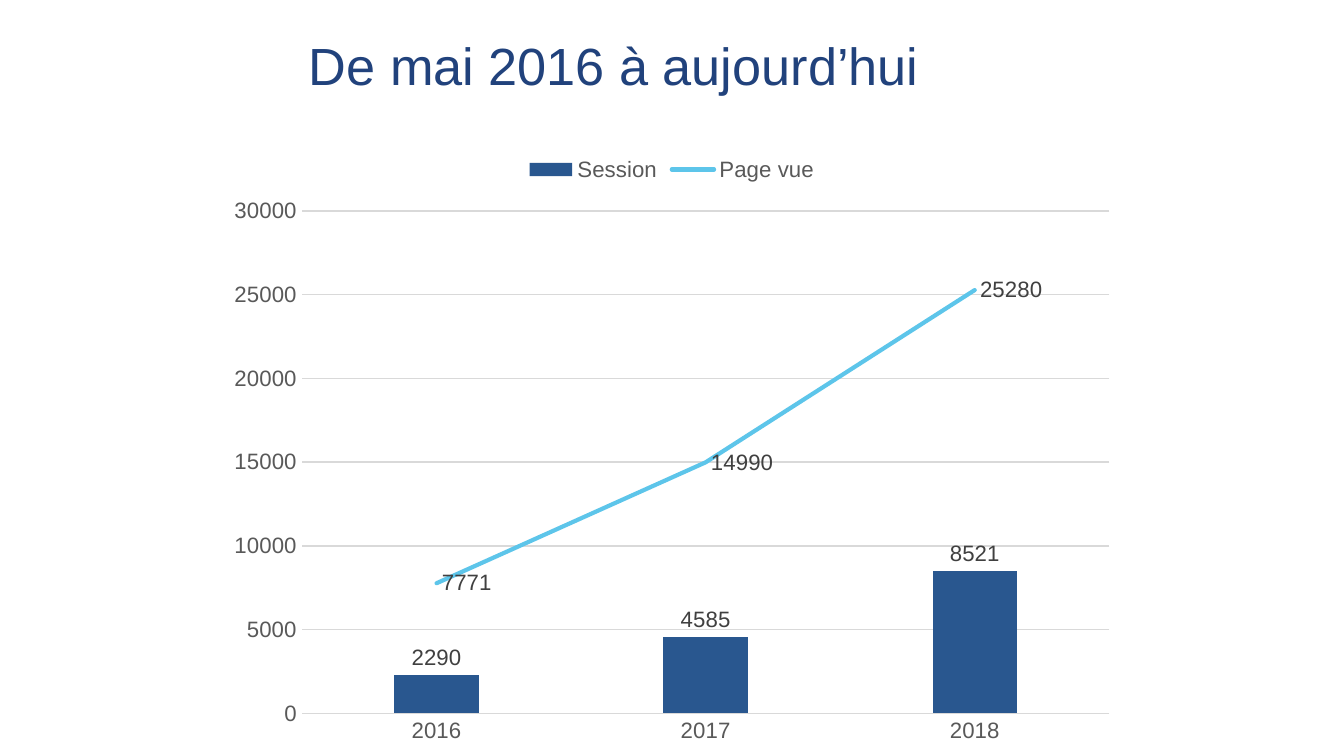
import pptx
import pptx.chart.data
import pptx.dml.color
import pptx.enum.chart
import pptx.enum.text
import pptx.oxml
import pptx.util
from pptx.util import Inches, Pt

ENUM = pptx.enum.chart
NS = 'xmlns:c="http://schemas.openxmlformats.org/drawingml/2006/chart"'
YEARS = ["2016", "2017", "2018"]
DATA = {"Session": [2290, 4585, 8521], "Page vue": [7771, 14990, 25280]}
BLUE, SKY, RULE = "29578F", "5DC5EA", "D9D9D9"


def color(code):
    return pptx.dml.color.RGBColor.from_string(code)


def style(font, size=11.9, code="595959"):
    font.size = Pt(size)
    font.name = "Arial"
    font.bold = False
    font.color.rgb = color(code)


def write(shape, text, align, **form):
    frame = shape.text_frame
    frame.word_wrap = True
    frame.vertical_anchor = pptx.enum.text.MSO_ANCHOR.MIDDLE
    para = frame.paragraphs[0]
    para.alignment = align
    run = para.add_run()
    run.text = text
    style(run.font, **form)


def place(shape, box):
    shape.left, shape.top, shape.width, shape.height = map(Inches, box)


def stroke(line, code, width):
    line.color.rgb = color(code)
    line.width = Pt(width)


def head(slide, box):
    title = slide.shapes.title
    place(title, box)
    write(title, "De mai 2016 à aujourd’hui", pptx.enum.text.PP_ALIGN.CENTER,
          size=28, code="21427C")


def split(chart):
    bars = chart.plots[0]._element
    views = chart.plots[0].series[1]._element
    for flag in views.xpath("c:invertIfNegative"):
        views.remove(flag)
    line = pptx.oxml.parse_xml(
        f'<c:lineChart {NS}><c:grouping val="standard"/>'
        '<c:varyColors val="0"/><c:marker val="1"/></c:lineChart>')
    line.insert(2, views)
    for axis in bars.xpath("c:axId"):
        line.append(pptx.oxml.parse_xml(
            f'<c:axId {NS} val="{axis.get("val")}"/>'))
    bars.addnext(line)


def fix(chart, x, y, w, h):
    area = chart._chartSpace.xpath("c:chart/c:plotArea")[0]
    for old in area.xpath("c:layout"):
        area.remove(old)
    sides = "".join(f'<c:{key} val="{val}"/>'
                    for key, val in zip("xywh", (x, y, w, h)))
    area.insert(0, pptx.oxml.parse_xml(
        f'<c:layout {NS}><c:manualLayout><c:layoutTarget val="inner"/>'
        '<c:xMode val="edge"/><c:yMode val="edge"/>'
        f'{sides}</c:manualLayout></c:layout>'))


def label(series, spot):
    marks = series.data_labels
    marks.show_value = True
    marks.position = spot
    style(marks.font, code="404040")


def graph(slide, box):
    data = pptx.chart.data.CategoryChartData()
    data.categories = YEARS
    for name, vals in DATA.items():
        data.add_series(name, vals)
    chart = slide.shapes.add_chart(
        ENUM.XL_CHART_TYPE.COLUMN_CLUSTERED, *map(Inches, box), data).chart
    style(chart.font, size=10, code="000000")
    chart.has_title = False
    chart.has_legend = True
    chart.legend.position = ENUM.XL_LEGEND_POSITION.TOP
    chart.legend.include_in_layout = False
    style(chart.legend.font)

    split(chart)
    fix(chart, 0.094, 0.112, 0.886, 0.82)
    bars, line = chart.plots
    bars.gap_width = 219
    bars.overlap = -27
    bars.vary_by_categories = False
    visit = bars.series[0]
    visit.format.fill.solid()
    visit.format.fill.fore_color.rgb = color(BLUE)
    label(visit, ENUM.XL_LABEL_POSITION.OUTSIDE_END)
    views = line.series[0]
    views.smooth = False
    views.marker.style = ENUM.XL_MARKER_STYLE.NONE
    stroke(views.format.line, SKY, 2.25)
    views.format.line._ln.set("cap", "rnd")
    label(views, ENUM.XL_LABEL_POSITION.RIGHT)

    for axis in (chart.category_axis, chart.value_axis):
        axis.major_tick_mark = ENUM.XL_TICK_MARK.NONE
        axis.minor_tick_mark = ENUM.XL_TICK_MARK.NONE
        style(axis.tick_labels.font)
    stroke(chart.category_axis.format.line, RULE, 0.75)
    scale = chart.value_axis
    scale.minimum_scale, scale.maximum_scale = 0, 30000
    scale.major_unit = 5000
    scale.format.line.fill.background()
    scale.has_major_gridlines = True
    stroke(scale.major_gridlines.format.line, RULE, 0.75)


def main():
    deck = pptx.Presentation()
    deck.slide_width, deck.slide_height = Inches(10), Inches(10 * 9 / 16)
    slide = deck.slides.add_slide(deck.slide_layouts[5])
    head(slide, (0.76, 0.01, 7.61, 0.94))
    graph(slide, (1.61, 1.06, 6.78, 4.56))
    deck.save("out.pptx")


if __name__ == "__main__":
    main()
